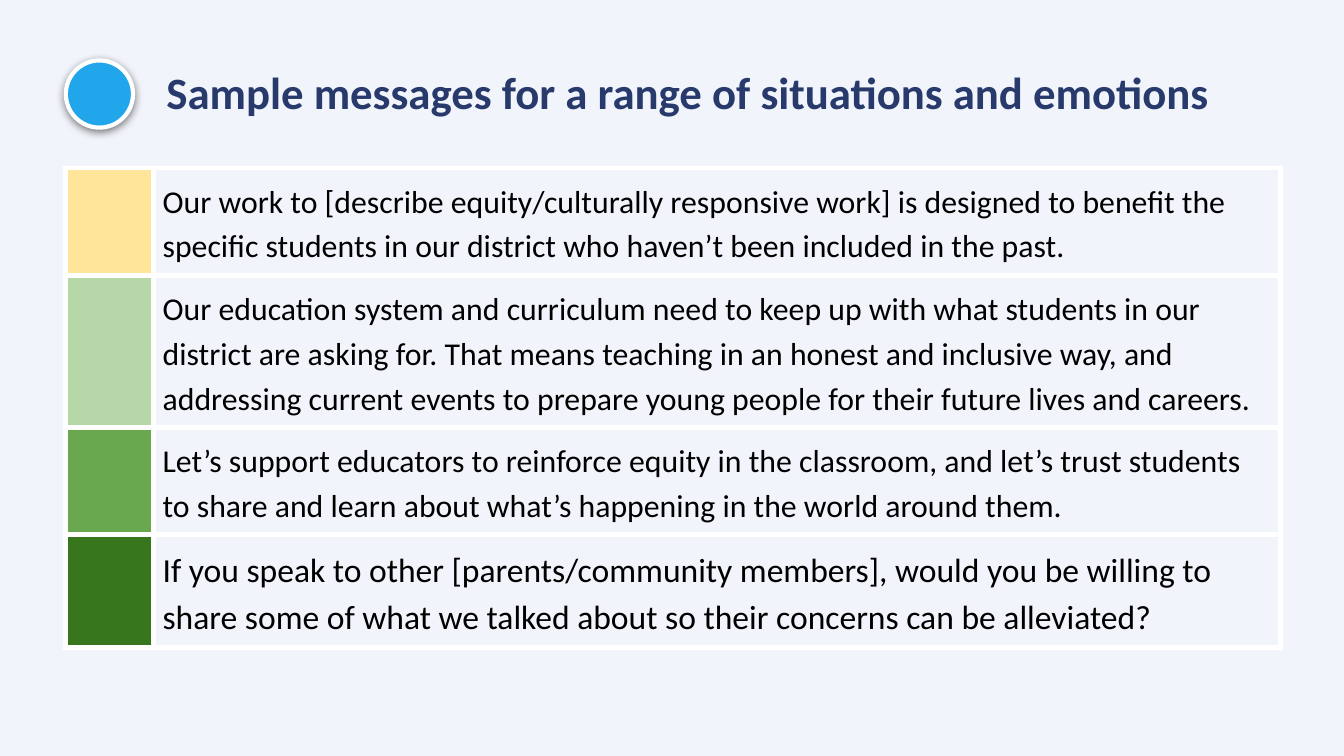
from dataclasses import dataclass

from lxml.etree import SubElement
from pptx import Presentation
from pptx.dml.color import RGBColor as Rgb
from pptx.enum.shapes import MSO_SHAPE as Preset
from pptx.enum.text import MSO_ANCHOR as Anchor
from pptx.oxml.ns import qn
from pptx.slide import Slide
from pptx.table import _Cell as Cell
from pptx.text.text import TextFrame
from pptx.util import Inches, Pt


@dataclass(frozen=True)
class Theme:
    font: str = "Calibri"
    background: str = "F2F4FB"
    heading: str = "273A6B"
    accent: str = "22A6EB"
    rule: str = "FFFFFF"
    text: str = "000000"
    heading_size: float = 24
    border_width: float = 3
    ring_width: float = 2.25


@dataclass(frozen=True)
class Message:
    color: str
    height: float
    text: str
    size: float = 17


THEME = Theme()
COLUMN_WIDTHS = (0.65, 8.39)
MESSAGES = (
    Message("FFE599", 0.8,
            "Our work to [describe equity/culturally responsive work] is designed to "
            "benefit the specific students in our district who haven’t been included "
            "in the past."),
    Message("B6D7A8", 1.13,
            "Our education system and curriculum need to keep up with what students in "
            "our district are asking for. That means teaching in an honest and inclusive "
            "way, and addressing current events to prepare young people for their future "
            "lives and careers."),
    Message("6AA84F", 0.8,
            "Let’s support educators to reinforce equity in the classroom, and let’s "
            "trust students to share and learn about what’s happening in the world "
            "around them."),
    Message("38761D", 0.84,
            "If you speak to other [parents/community members], would you be willing to "
            "share some of what we talked about so their concerns can be alleviated?",
            18),
)


def write(frame: TextFrame, text: str, size: float, color: str,
          bold: bool = False, spacing: float = 1.0) -> None:
    paragraph = frame.paragraphs[0]
    paragraph.line_spacing = spacing
    run = paragraph.add_run()
    run.text = text
    run.font.name = THEME.font
    run.font.size = Pt(size)
    run.font.bold = bold
    run.font.color.rgb = Rgb.from_string(color)


def add_heading(slide: Slide, text: str) -> None:
    heading = slide.shapes.add_textbox(Inches(1.14), Inches(0.26), Inches(8.13), Inches(0.72))
    frame = heading.text_frame
    frame.word_wrap = True
    frame.vertical_anchor = Anchor.BOTTOM
    frame.margin_left = frame.margin_right = Inches(0.1)
    frame.margin_top = frame.margin_bottom = Inches(0.1)
    write(frame, text, THEME.heading_size, THEME.heading, bold=True)


def add_marker(slide: Slide) -> None:
    marker = slide.shapes.add_shape(Preset.OVAL, Inches(0.49), Inches(0.45),
                                    Inches(0.5), Inches(0.5))
    marker.fill.solid()
    marker.fill.fore_color.rgb = Rgb.from_string(THEME.accent)
    marker.line.color.rgb = Rgb.from_string(THEME.rule)
    marker.line.width = Pt(THEME.ring_width)
    marker.shadow.inherit = False
    effects = marker._element.spPr.find(qn("a:effectLst"))
    shadow = SubElement(effects, qn("a:outerShdw"), blurRad=str(Pt(4.5)),
                        dist=str(Pt(1.5)), dir="5400000", algn="bl", rotWithShape="0")
    tint = SubElement(shadow, qn("a:srgbClr"), val="000000")
    SubElement(tint, qn("a:alpha"), val="50000")


def add_borders(cell: Cell) -> None:
    properties = cell._tc.get_or_add_tcPr()
    for position, side in enumerate(("a:lnL", "a:lnR", "a:lnT", "a:lnB")):
        border = SubElement(properties, qn(side), w=str(Pt(THEME.border_width)))
        fill = SubElement(border, qn("a:solidFill"))
        SubElement(fill, qn("a:srgbClr"), val=THEME.rule)
        properties.insert(position, border)


def add_messages(slide: Slide, messages: tuple[Message, ...]) -> None:
    table = slide.shapes.add_table(
        len(messages), len(COLUMN_WIDTHS), Inches(0.49), Inches(1.25),
        Inches(sum(COLUMN_WIDTHS)), Inches(sum(m.height for m in messages))).table
    table.first_row = table.horz_banding = False
    for column, width in zip(table.columns, COLUMN_WIDTHS):
        column.width = Inches(width)
    for row, message in zip(table.rows, messages):
        row.height = Inches(message.height)
        swatch, wording = row.cells
        swatch.fill.solid()
        swatch.fill.fore_color.rgb = Rgb.from_string(message.color)
        wording.fill.background()
        wording.margin_left = wording.margin_right = Inches(0.07)
        wording.margin_top = wording.margin_bottom = Inches(0.07)
        write(wording.text_frame, message.text, message.size, THEME.text, spacing=1.15)
        for cell in (swatch, wording):
            add_borders(cell)


def main() -> None:
    deck = Presentation()
    deck.slide_width = Inches(10)
    deck.slide_height = deck.slide_width * 9 // 16
    slide = deck.slides.add_slide(deck.slide_layouts[6])
    slide.background.fill.solid()
    slide.background.fill.fore_color.rgb = Rgb.from_string(THEME.background)
    add_heading(slide, "Sample messages for a range of situations and emotions")
    add_marker(slide)
    add_messages(slide, MESSAGES)
    deck.save("out.pptx")


if __name__ == "__main__":
    main()
